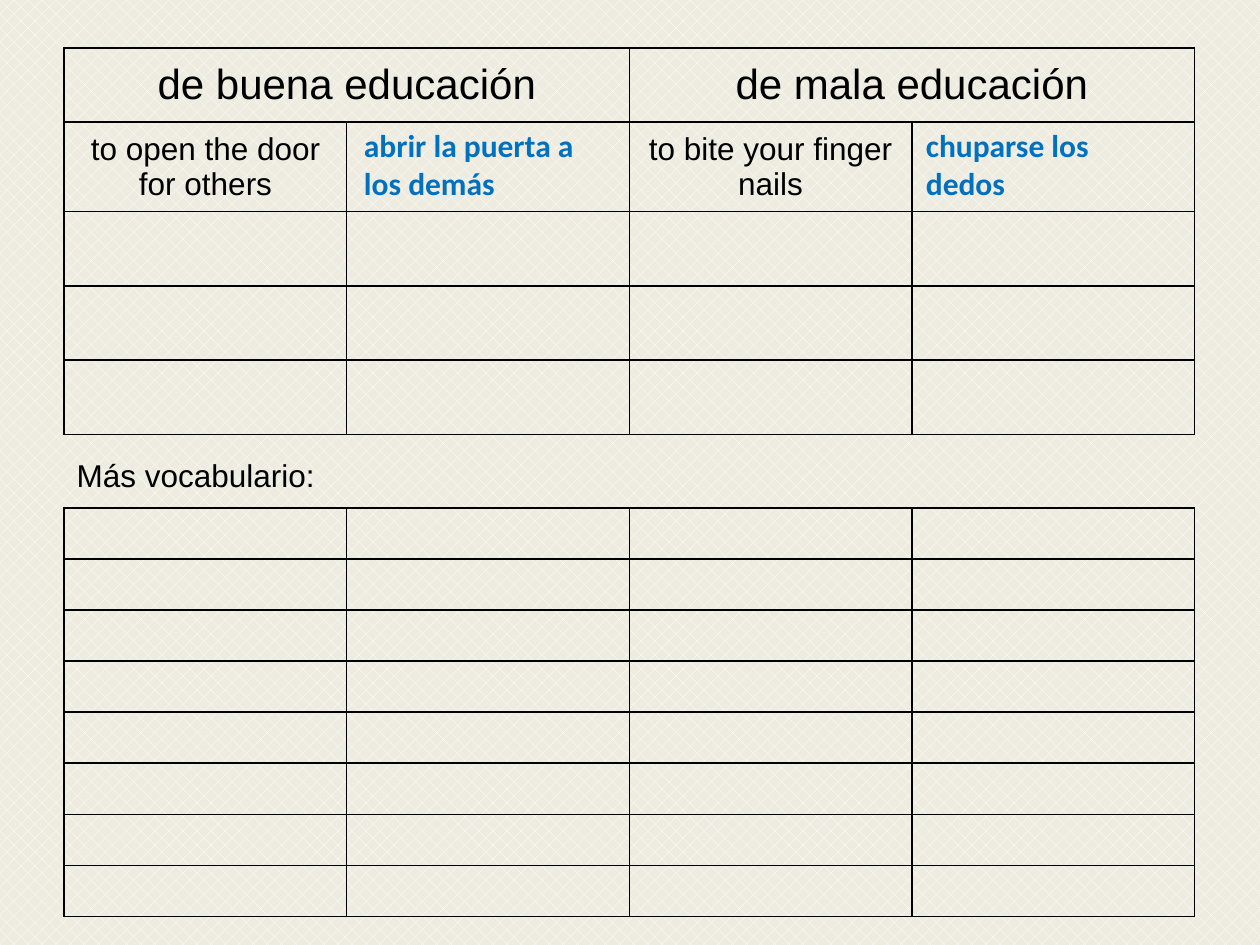
import pptx
import pptx.dml.color
import pptx.enum.dml
import pptx.enum.text
import pptx.oxml
import pptx.oxml.ns
import pptx.util

BLACK = pptx.dml.color.RGBColor(0x00, 0x00, 0x00)
BLUE = pptx.dml.color.RGBColor(0x00, 0x70, 0xC0)
CREAM = pptx.dml.color.RGBColor(0xEE, 0xEC, 0xE1)
WHITE = pptx.dml.color.RGBColor(0xFF, 0xFF, 0xFF)

LEFT, COLUMN, COLUMNS = 0.51, 2.2425, 4
PHRASE_ROWS = [0.59, 0.71, 0.59, 0.59, 0.59]
VOCABULARY_ROWS = [0.405] * 8
HEADING = {"name": "Arial", "size": pptx.util.Pt(24)}
BODY = {"name": "Arial", "size": pptx.util.Pt(18)}
ANSWER = {"name": "Calibri", "size": pptx.util.Pt(18), "bold": True}


def write(frame, text, style, color, align):
    """Write one formatted paragraph into a text frame."""
    para = frame.paragraphs[0]
    para.alignment = align
    span = para.add_run()
    span.text = text
    for name, value in style.items():
        setattr(span.font, name, value)
    span.font.color.rgb = color


def add_borders(cell):
    """Draw a thin black line on each side of a cell."""
    properties = cell._tc.get_or_add_tcPr()
    for index, side in enumerate(("lnL", "lnR", "lnT", "lnB")):
        line = pptx.oxml.parse_xml(
            f'<a:{side} {pptx.oxml.ns.nsdecls("a")} w="{pptx.util.Pt(1)}">'
            f'<a:solidFill><a:srgbClr val="{BLACK}"/></a:solidFill></a:{side}>')
        properties.insert(index, line)


def add_grid(page, top, heights):
    """Add a ruled, unfilled table with the given row heights."""
    box = page.shapes.add_table(
        len(heights), COLUMNS, pptx.util.Inches(LEFT), pptx.util.Inches(top),
        pptx.util.Inches(COLUMN * COLUMNS), pptx.util.Inches(sum(heights)))
    table = box.table
    table.first_row = table.horz_banding = False
    for row, height in zip(table.rows, heights):
        row.height = pptx.util.Inches(height)
    for cell in table.iter_cells():
        cell.fill.background()
        add_borders(cell)
    return table


def add_phrases(page, top):
    """Add the good and bad manners table with its headings and prompts."""
    table = add_grid(page, top, PHRASE_ROWS)
    pairs = [("de buena educación", "to open the door for others"),
             ("de mala educación", "to bite your finger nails")]
    for index, (heading, prompt) in enumerate(pairs):
        column = 2 * index
        table.cell(0, column).merge(table.cell(0, column + 1))
        for row, text, style in ((0, heading, HEADING), (1, prompt, BODY)):
            cell = table.cell(row, column)
            cell.vertical_anchor = pptx.enum.text.MSO_ANCHOR.MIDDLE
            write(cell.text_frame, text, style, BLACK, pptx.enum.text.PP_ALIGN.CENTER)


def add_label(page, text, bounds, style, color):
    """Add a wrapped text box at the given left, top, width and height."""
    box = page.shapes.add_textbox(*map(pptx.util.Inches, bounds))
    box.text_frame.word_wrap = True
    box.text_frame.auto_size = pptx.enum.text.MSO_AUTO_SIZE.SHAPE_TO_FIT_TEXT
    write(box.text_frame, text, style, color, pptx.enum.text.PP_ALIGN.LEFT)


def paint_background(page):
    """Give the page its speckled cream background."""
    fill = page.background.fill
    fill.patterned()
    fill.pattern = pptx.enum.dml.MSO_PATTERN.PERCENT_25
    fill.fore_color.rgb = WHITE
    fill.back_color.rgb = CREAM


def main():
    """Build the vocabulary worksheet and save it."""
    deck = pptx.Presentation()
    deck.slide_width = pptx.util.Inches(10)
    deck.slide_height = pptx.util.Inches(7.5)
    page = deck.slides.add_slide(deck.slide_layouts[6])
    paint_background(page)
    add_phrases(page, 0.38)
    add_grid(page, 4.03, VOCABULARY_ROWS)
    add_label(page, "Más vocabulario:", (LEFT, 3.57, 3.32, 0.4), BODY, BLACK)
    for left, text in ((2.79, "abrir la puerta a los demás"), (7.25, "chuparse los dedos")):
        add_label(page, text, (left, 0.95, 2.12, 0.71), ANSWER, BLUE)
    deck.save("out.pptx")


if __name__ == "__main__":
    main()
